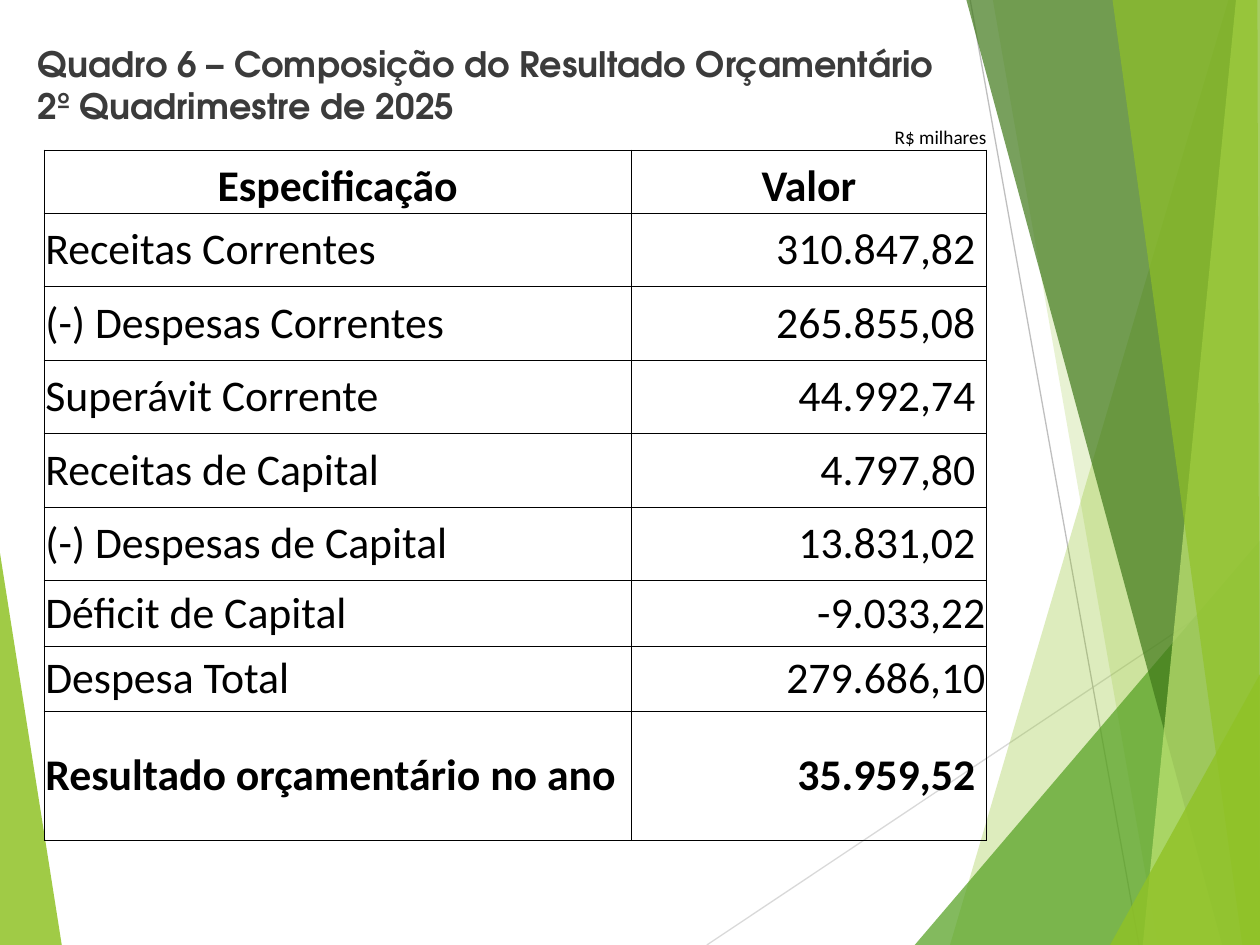
from dataclasses import dataclass

from lxml import etree
from pptx import Presentation
from pptx.dml.color import RGBColor
from pptx.enum.shapes import MSO_CONNECTOR
from pptx.enum.text import MSO_ANCHOR, MSO_AUTO_SIZE, PP_ALIGN
from pptx.oxml.ns import qn
from pptx.util import Inches, Pt

LEFT, CENTER, RIGHT = PP_ALIGN.LEFT, PP_ALIGN.CENTER, PP_ALIGN.RIGHT
TOP, MIDDLE, BOTTOM = MSO_ANCHOR.TOP, MSO_ANCHOR.MIDDLE, MSO_ANCHOR.BOTTOM
STRAIGHT = MSO_CONNECTOR.STRAIGHT
NO_AUTOSIZE = MSO_AUTO_SIZE.NONE

COLORS = {
    "lime": "90C226",
    "green": "54A021",
    "forest": "3F7819",
    "pale lime": "C0E474",
    "light gray": "D9D9D9",
    "gray": "BFBFBF",
    "title": "3B3B3B",
    "black": "000000",
}
TITLE_FONT = "TeX Gyre Adventor"
TABLE_FONT = "Calibri"
WIDTH, HEIGHT = 10, 7.5
COLUMN_WIDTHS = [4.66, 1.25, 1.57]
TABLE_HEIGHT = 5.83
UNIT_HEIGHT, HEADER_HEIGHT, TOTAL_HEIGHT, RESULT_HEIGHT = 0.35, 0.5, 0.52, 1.02
# Five detail rows share the height left by the others.
DETAIL_HEIGHT = (
    TABLE_HEIGHT - UNIT_HEIGHT - HEADER_HEIGHT - 2 * TOTAL_HEIGHT - RESULT_HEIGHT
) / 5
CELL_MARGIN, VALUE_INDENT = 0.01, 0.09


@dataclass
class Facet:
    points: list[tuple[float, float]]
    color: str
    opacity: int


@dataclass
class Ray:
    start: tuple[float, float]
    end: tuple[float, float]
    color: str


@dataclass
class BudgetRow:
    label: str
    value: str
    height: float = DETAIL_HEIGHT
    value_margin: float = VALUE_INDENT
    bold: bool = False


LEFT_FACET = Facet([(0, 4.39), (0.49, HEIGHT), (0, HEIGHT)], "lime", 85)
RAYS = [
    Ray((5.61, HEIGHT), (WIDTH, 4.57), "light gray"),
    Ray((7.7, 0), (9.04, HEIGHT), "gray"),
]
RIGHT_CORNERS = [(WIDTH, HEIGHT), (WIDTH, 0)]
RIGHT_FACETS = [
    Facet([(9.75, 0), (7.54, HEIGHT), *RIGHT_CORNERS], "lime", 30),
    Facet([(7.88, 0), (9.19, HEIGHT), *RIGHT_CORNERS], "lime", 20),
    Facet([(7.26, HEIGHT), (WIDTH, 4.29), (WIDTH, HEIGHT)], "green", 72),
    Facet([(7.67, 0), (9.7, HEIGHT), *RIGHT_CORNERS], "forest", 70),
    Facet([(9.81, 0), (9.07, HEIGHT), *RIGHT_CORNERS], "pale lime", 70),
    Facet([(8.83, 0), (9.86, HEIGHT), (WIDTH, HEIGHT), (9.98, 0)], "lime", 65),
    Facet([(8.81, HEIGHT), (WIDTH, 5.35), (WIDTH, HEIGHT)], "lime", 80),
]
BUDGET_ROWS = [
    BudgetRow("Receitas Correntes", "310.847,82"),
    BudgetRow("(-) Despesas Correntes", "265.855,08"),
    BudgetRow("Superávit Corrente", "44.992,74"),
    BudgetRow("Receitas de Capital", "4.797,80"),
    BudgetRow("(-) Despesas de Capital", "13.831,02"),
    BudgetRow("Déficit de Capital", "-9.033,22", TOTAL_HEIGHT, CELL_MARGIN),
    BudgetRow("Despesa Total", "279.686,10", TOTAL_HEIGHT, CELL_MARGIN),
    BudgetRow("Resultado orçamentário no ano", "35.959,52", RESULT_HEIGHT, bold=True),
]


def rgb(name: str) -> RGBColor:
    return RGBColor.from_string(COLORS[name])


def draw_facet(slide, facet: Facet) -> None:
    start, *others = [(Inches(x), Inches(y)) for x, y in facet.points]
    builder = slide.shapes.build_freeform(*start)
    builder.add_line_segments(others, close=True)
    shape = builder.convert_to_shape()
    shape.shadow.inherit = False
    shape.line.fill.background()
    shape.fill.solid()
    shape.fill.fore_color.rgb = rgb(facet.color)
    color = shape.element.spPr.find(f"{qn('a:solidFill')}/{qn('a:srgbClr')}")
    etree.SubElement(color, qn("a:alpha"), val=str(facet.opacity * 1000))


def draw_ray(slide, ray: Ray) -> None:
    ends = [Inches(length) for length in (*ray.start, *ray.end)]
    connector = slide.shapes.add_connector(STRAIGHT, *ends)
    connector.line.color.rgb = rgb(ray.color)
    connector.line.width = Pt(0.75)
    etree.SubElement(connector.element.spPr, qn("a:effectLst"))


def format_title(slide) -> None:
    title = slide.shapes.title
    title.left, title.top = Inches(0.2), Inches(0.29)
    title.width, title.height = Inches(8.5), Inches(0.33)
    frame = title.text_frame
    frame.auto_size = NO_AUTOSIZE
    frame.word_wrap = True
    frame.vertical_anchor = TOP
    frame.text = "Quadro 6 – Composição do Resultado Orçamentário\v2º Quadrimestre de 2025"
    paragraph = frame.paragraphs[0]
    paragraph.alignment = LEFT
    paragraph.font.name = TITLE_FONT
    paragraph.font.size = Pt(20)
    paragraph.font.bold = True
    paragraph.font.color.rgb = rgb("title")
    # Bring the title in front of the background facets.
    slide.shapes.element.append(title.element)


def set_borders(cell, visible: str) -> None:
    """Draw the sides named in visible (L, R, T, B) and clear the others."""
    properties = cell._tc.get_or_add_tcPr()
    for index, side in enumerate("LRTB"):
        border = etree.Element(qn(f"a:ln{side}"), w=str(Pt(0.5)))
        if side in visible:
            fill = etree.SubElement(border, qn("a:solidFill"))
            etree.SubElement(fill, qn("a:srgbClr"), val=COLORS["black"])
        else:
            etree.SubElement(border, qn("a:noFill"))
        properties.insert(index, border)


def write_cell(cell, text: str, alignment, anchor, size: float = 25,
               bold: bool = False, left: float = 0, right: float = 0) -> None:
    cell.margin_left, cell.margin_right = Inches(left), Inches(right)
    cell.margin_top = cell.margin_bottom = 0
    cell.vertical_anchor = anchor
    cell.text = text
    paragraph = cell.text_frame.paragraphs[0]
    paragraph.alignment = alignment
    paragraph.font.name = TABLE_FONT
    paragraph.font.size = Pt(size)
    paragraph.font.bold = bold
    paragraph.font.color.rgb = rgb("black")


def add_budget_table(slide) -> None:
    heights = [UNIT_HEIGHT, HEADER_HEIGHT, *(row.height for row in BUDGET_ROWS)]
    table = slide.shapes.add_table(
        len(heights), len(COLUMN_WIDTHS), Inches(0.35), Inches(0.84),
        Inches(sum(COLUMN_WIDTHS)), Inches(TABLE_HEIGHT),
    ).table
    table.first_row = table.horz_banding = False
    for column, width in zip(table.columns, COLUMN_WIDTHS):
        column.width = Inches(width)
    for row_index, height in enumerate(heights):
        table.rows[row_index].height = Inches(height)
        for cell in table.rows[row_index].cells:
            cell.fill.background()
            set_borders(cell, "LRTB" if row_index else "B")
        if row_index:
            table.cell(row_index, 1).merge(table.cell(row_index, 2))

    for column_index, text in enumerate(["", "", "R$ milhares"]):
        write_cell(table.cell(0, column_index), text, RIGHT, BOTTOM, size=11)
    for column_index, text in enumerate(["Especificação", "Valor"]):
        write_cell(table.cell(1, column_index), text, CENTER, BOTTOM, bold=True)
    for row_index, row in enumerate(BUDGET_ROWS, start=2):
        write_cell(table.cell(row_index, 0), row.label, LEFT, MIDDLE,
                   bold=row.bold, left=CELL_MARGIN, right=CELL_MARGIN)
        write_cell(table.cell(row_index, 1), row.value, RIGHT, MIDDLE,
                   bold=row.bold, left=CELL_MARGIN, right=row.value_margin)


def main() -> None:
    presentation = Presentation()
    presentation.slide_width, presentation.slide_height = Inches(WIDTH), Inches(HEIGHT)
    slide = presentation.slides.add_slide(presentation.slide_layouts[5])
    draw_facet(slide, LEFT_FACET)
    for ray in RAYS:
        draw_ray(slide, ray)
    for facet in RIGHT_FACETS:
        draw_facet(slide, facet)
    format_title(slide)
    add_budget_table(slide)
    presentation.save("out.pptx")


if __name__ == "__main__":
    main()
